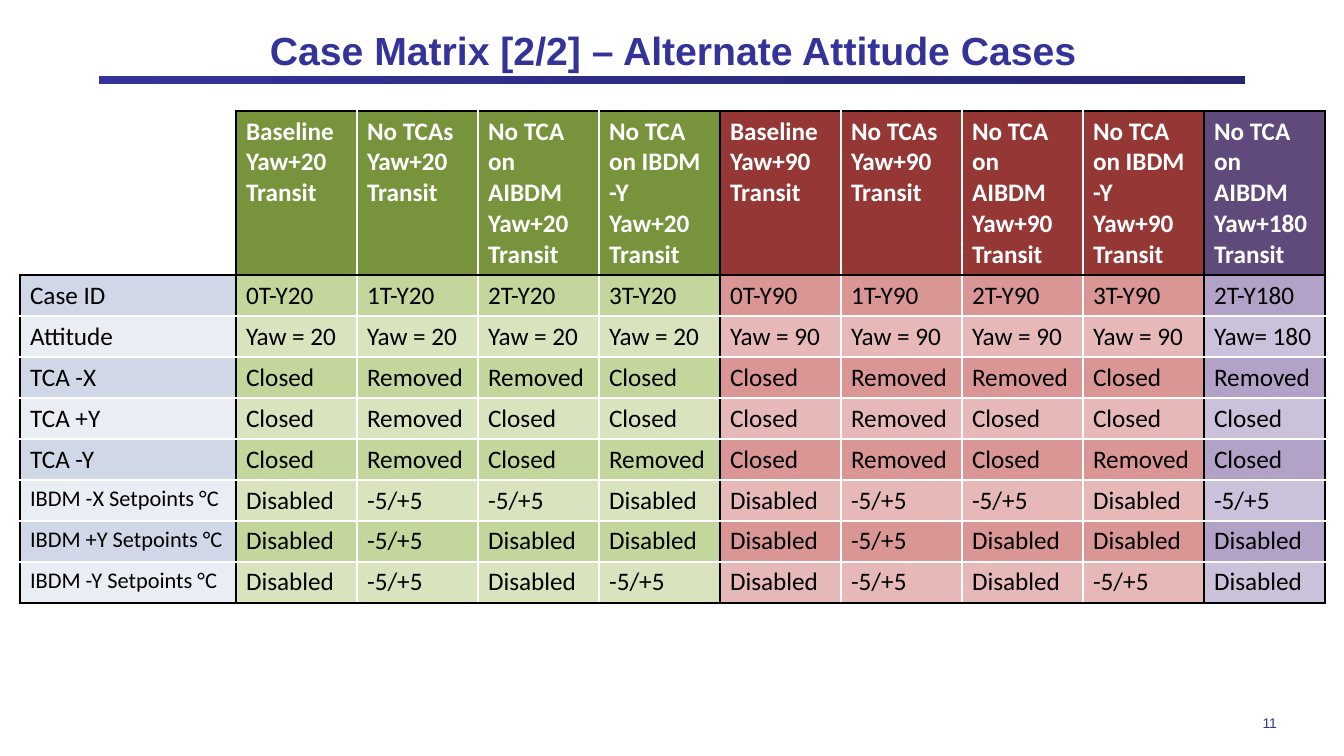
from lxml import etree
from pptx import Presentation
from pptx.dml.color import RGBColor
from pptx.enum.shapes import MSO_SHAPE
from pptx.enum.text import MSO_ANCHOR, PP_ALIGN
from pptx.oxml.ns import qn
from pptx.util import Pt

PX = 914400 / 100.8
COLORS = {"navy": "333399", "navy_dark": "252570", "white": "FFFFFF", "black": "000000"}
# Column groups: header, odd row, even row
GROUPS = {
    "label": (None, "D0D8E8", "E9EDF4"),
    "yaw20": ("77933C", "C3D69B", "D7E4BD"),
    "yaw90": ("953735", "D99694", "E6B9B8"),
    "yaw180": ("604A7B", "B3A2C7", "CCC1DA"),
}
COLUMN_GROUPS = ["label"] + ["yaw20"] * 4 + ["yaw90"] * 4 + ["yaw180"]


def px(*values):
    return [round(v * PX) for v in values]


def write_text(tf, text, size=18, font="Calibri", color="black", bold=False,
               align=PP_ALIGN.LEFT):
    p = tf.paragraphs[0]
    p.alignment = align
    r = p.add_run()
    r.text = text
    r.font.size, r.font.name, r.font.bold = Pt(size), font, bold
    r.font.color.rgb = RGBColor.from_string(COLORS[color])


prs = Presentation()
prs.slide_width, prs.slide_height = px(1344, 756)
slide = prs.slides.add_slide(prs.slide_layouts[5])

# Bar under the title
sp = slide.shapes.add_shape(MSO_SHAPE.RECTANGLE, *px(99, 76, 1146, 8))
sp.shadow.inherit = False
sp.line.fill.background()
sp.fill.gradient()
sp.fill.gradient_angle = 0
for stop, name in zip(sp.fill.gradient_stops, ("navy", "navy_dark")):
    stop.color.rgb = RGBColor.from_string(COLORS[name])

# Title
title = slide.shapes.title
title.left, title.top, title.width, title.height = px(68, 21, 1210, 58)
tf = title.text_frame
tf.vertical_anchor = MSO_ANCHOR.MIDDLE
tf.margin_top = tf.margin_bottom = 0
write_text(tf, "Case Matrix [2/2] – Alternate Attitude Cases", size=28, font="Arial",
           color="navy", bold=True, align=PP_ALIGN.CENTER)

# Case matrix contents
rows = [
    ["", "Baseline Yaw+20 Transit", "No TCAs Yaw+20 Transit",
     "No TCA on AIBDM Yaw+20 Transit", "No TCA on IBDM -Y Yaw+20 Transit",
     "Baseline Yaw+90 Transit", "No TCAs Yaw+90 Transit",
     "No TCA on AIBDM Yaw+90 Transit", "No TCA on IBDM -Y Yaw+90 Transit",
     "No TCA on AIBDM Yaw+180 Transit"],
    ["Case ID", "0T-Y20", "1T-Y20", "2T-Y20", "3T-Y20",
     "0T-Y90", "1T-Y90", "2T-Y90", "3T-Y90", "2T-Y180"],
    ["Attitude"] + ["Yaw = 20"] * 4 + ["Yaw = 90"] * 4 + ["Yaw= 180"],
]
# Values for the four cases of each yaw angle; yaw 180 repeats the third case
settings = {
    "TCA -X": ["Closed", "Removed", "Removed", "Closed"],
    "TCA +Y": ["Closed", "Removed", "Closed", "Closed"],
    "TCA -Y": ["Closed", "Removed", "Closed", "Removed"],
    "IBDM -X Setpoints °C": ["Disabled", "-5/+5", "-5/+5", "Disabled"],
    "IBDM +Y Setpoints °C": ["Disabled", "-5/+5", "Disabled", "Disabled"],
    "IBDM -Y Setpoints °C": ["Disabled", "-5/+5", "Disabled", "-5/+5"],
}
for label, cases in settings.items():
    rows.append([label] + cases * 2 + [cases[2]])

# Case matrix table
frame = slide.shapes.add_table(len(rows), len(COLUMN_GROUPS), *px(20, 111, 1305, 492))
table = frame.table
table.first_row = table.horz_banding = False
for i, column in enumerate(table.columns):
    column.width = px(121 if i else 216)[0]
for i, row in enumerate(table.rows):
    row.height = px(41 if i else 164)[0]

black_x = {0, 1, 5, 9, 10}
black_y = {0, 1, len(rows)}
for y, values in enumerate(rows):
    for x, text in enumerate(values):
        cell = table.cell(y, x)
        header, odd, even = GROUPS[COLUMN_GROUPS[x]]
        fill = header if y == 0 else odd if y % 2 else even
        if fill:
            cell.fill.solid()
            cell.fill.fore_color.rgb = RGBColor.from_string(fill)
        else:
            cell.fill.background()
        if text:
            write_text(cell.text_frame, text, size=16 if "Setpoints" in text else 18,
                       color="black" if y else "white", bold=y == 0)

        # Borders: black around each group, white inside and at the empty corner
        corner = x == 0 and y == 0
        sides = {"a:lnL": x in black_x and not corner, "a:lnR": x + 1 in black_x,
                 "a:lnT": y in black_y and not corner, "a:lnB": y + 1 in black_y}
        tcPr = cell._tc.get_or_add_tcPr()
        for i, (tag, is_black) in enumerate(sides.items()):
            ln = etree.Element(qn(tag), w=str(Pt(1)))
            solid = etree.SubElement(ln, qn("a:solidFill"))
            etree.SubElement(solid, qn("a:srgbClr"),
                             val=COLORS["black" if is_black else "white"])
            tcPr.insert(i, ln)

# Page number
box = slide.shapes.add_textbox(*px(997, 706, 280, 33))
tf = box.text_frame
tf.word_wrap = True
tf.vertical_anchor = MSO_ANCHOR.MIDDLE
tf.margin_left = tf.margin_right = tf.margin_top = tf.margin_bottom = 0
write_text(tf, "11", size=10, font="Arial", color="navy", align=PP_ALIGN.RIGHT)

prs.save("out.pptx")
